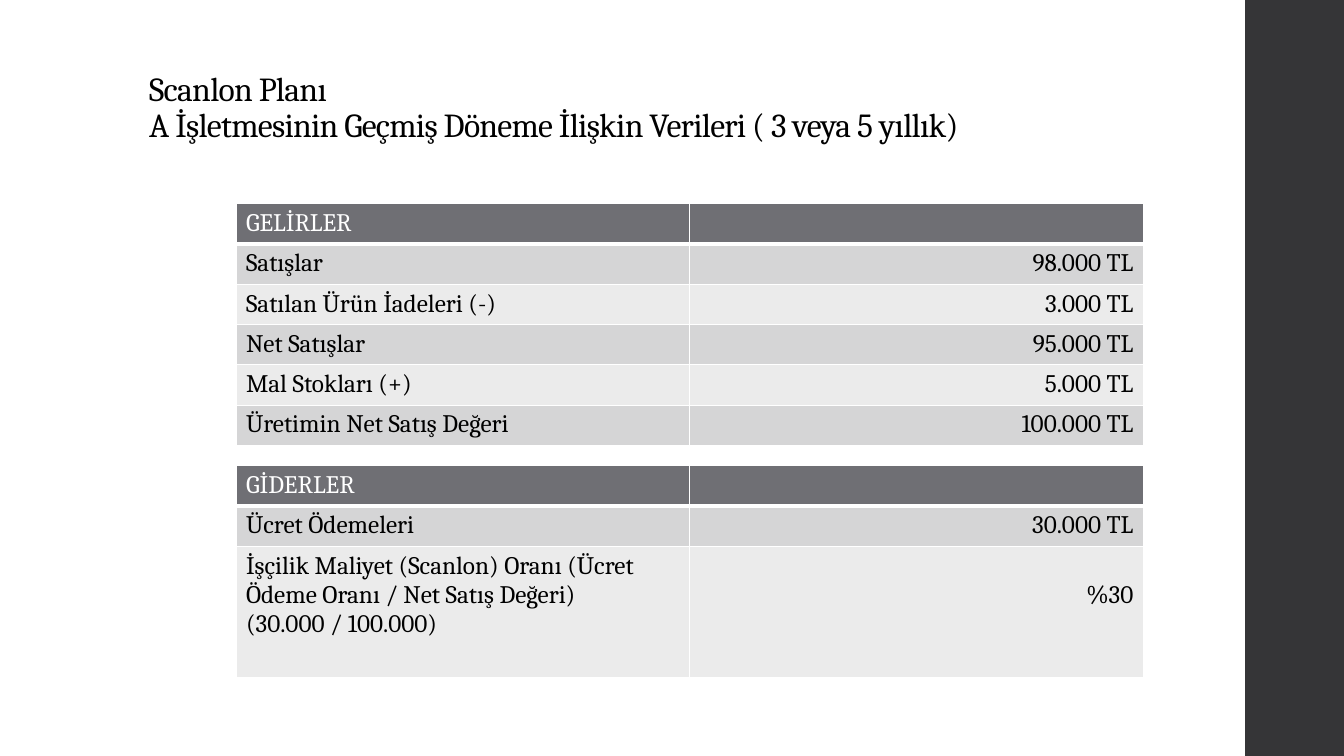
from dataclasses import dataclass

import pptx
import pptx.dml.color
import pptx.enum.shapes
import pptx.enum.text
import pptx.oxml
import pptx.oxml.ns
import pptx.util

FONT = "Cambria"
INK, WHITE, SIDE = "000000", "FFFFFF", "353537"
HEAD, BANDS = "6F6F74", ("D5D5D6", "EBEBEB")
LEFT, WIDTH, LINE = 23.4, 45, 4  # table edge, column width, row height


@dataclass
class Entry:
    label: str
    value: str = ""
    rows: float = LINE
    drop: float = 0.5


@dataclass
class Ledger:
    top: float
    entries: list[Entry]


LEDGERS = [
    Ledger(20.2, [
        Entry("GELİRLER"),
        Entry("Satışlar", "98.000 TL"),
        Entry("Satılan Ürün İadeleri (-)", "3.000 TL"),
        Entry("Net Satışlar", "95.000 TL"),
        Entry("Mal Stokları (+)", "5.000 TL"),
        Entry("Üretimin Net Satış Değeri", "100.000 TL"),
    ]),
    Ledger(46.2, [
        Entry("GİDERLER"),
        Entry("Ücret Ödemeleri", "30.000 TL"),
        Entry("İşçilik Maliyet (Scanlon) Oranı (Ücret Ödeme Oranı / Net Satış Değeri)\n"
              "(30.000 / 100.000)", "%30", 13, 3.4),
    ]),
]


def grid(count: float) -> int:
    """Turn columns or rows of a tenth of an inch into a length."""
    return pptx.util.Inches(count / 10)


def shade(hue: str) -> pptx.dml.color.RGBColor:
    return pptx.dml.color.RGBColor.from_string(hue)


def paint(fill, hue: str) -> None:
    fill.solid()
    fill.fore_color.rgb = shade(hue)


def style(para, size: float, hue: str) -> None:
    para.font.name = FONT
    para.font.size = pptx.util.Pt(size)
    para.font.bold = False
    para.font.color.rgb = shade(hue)


def frame(cell, base: float) -> None:
    """Rule a cell in white; base is the width of its lower line in points."""
    props = cell._tc.get_or_add_tcPr()
    for side, width in (("L", 1), ("R", 1), ("T", 1), ("B", base)):
        props.append(pptx.oxml.parse_xml(
            f'<a:ln{side} {pptx.oxml.ns.nsdecls("a")} w="{pptx.util.Pt(width)}">'
            f'<a:solidFill><a:srgbClr val="{WHITE}"/></a:solidFill></a:ln{side}>'))


def add_title(slide, text: str) -> None:
    title = slide.shapes.title
    title.left, title.top, title.width, title.height = map(grid, (13.8, 4, 106, 14.5))
    body = title.text_frame
    body.text = text
    body.word_wrap = True
    body.auto_size = pptx.enum.text.MSO_AUTO_SIZE.NONE
    body.vertical_anchor = pptx.enum.text.MSO_ANCHOR.BOTTOM
    body.margin_bottom = grid(4.1)
    para = body.paragraphs[0]
    para.alignment = pptx.enum.text.PP_ALIGN.LEFT
    para.line_spacing = 0.9
    style(para, 24, INK)
    for run in para.runs:
        run.font._element.set("spc", "-50")


def add_side(slide) -> None:
    bar = slide.shapes.add_shape(
        pptx.enum.shapes.MSO_SHAPE.RECTANGLE, grid(123.5), 0, grid(10), grid(75))
    bar.shadow.inherit = False
    paint(bar.fill, SIDE)
    bar.line.fill.background()


def add_ledger(slide, ledger: Ledger) -> None:
    total = sum(entry.rows for entry in ledger.entries)
    table = slide.shapes.add_table(
        len(ledger.entries), 2, grid(LEFT), grid(ledger.top),
        grid(2 * WIDTH), grid(total)).table
    for column in table.columns:
        column.width = grid(WIDTH)
    for index, entry in enumerate(ledger.entries):
        table.rows[index].height = grid(entry.rows)
        first = index == 0
        for cell, text in zip(table.rows[index].cells, (entry.label, entry.value)):
            frame(cell, 3 if first else 1)
            paint(cell.fill, HEAD if first else BANDS[(index - 1) % 2])
            cell.text = text
            for para in cell.text_frame.paragraphs:
                style(para, 18, WHITE if first else INK)
        cell = table.cell(index, 1)
        cell.margin_top = grid(entry.drop)
        cell.text_frame.paragraphs[0].alignment = pptx.enum.text.PP_ALIGN.RIGHT


def main() -> None:
    deck = pptx.Presentation()
    deck.slide_width, deck.slide_height = grid(133.3), grid(75)
    slide = deck.slides.add_slide(deck.slide_layouts[5])
    add_side(slide)
    add_title(slide, "Scanlon Planı\vA İşletmesinin Geçmiş Döneme İlişkin Verileri ( 3 veya 5 yıllık)")
    for ledger in LEDGERS:
        add_ledger(slide, ledger)
    deck.save("out.pptx")


if __name__ == "__main__":
    main()
